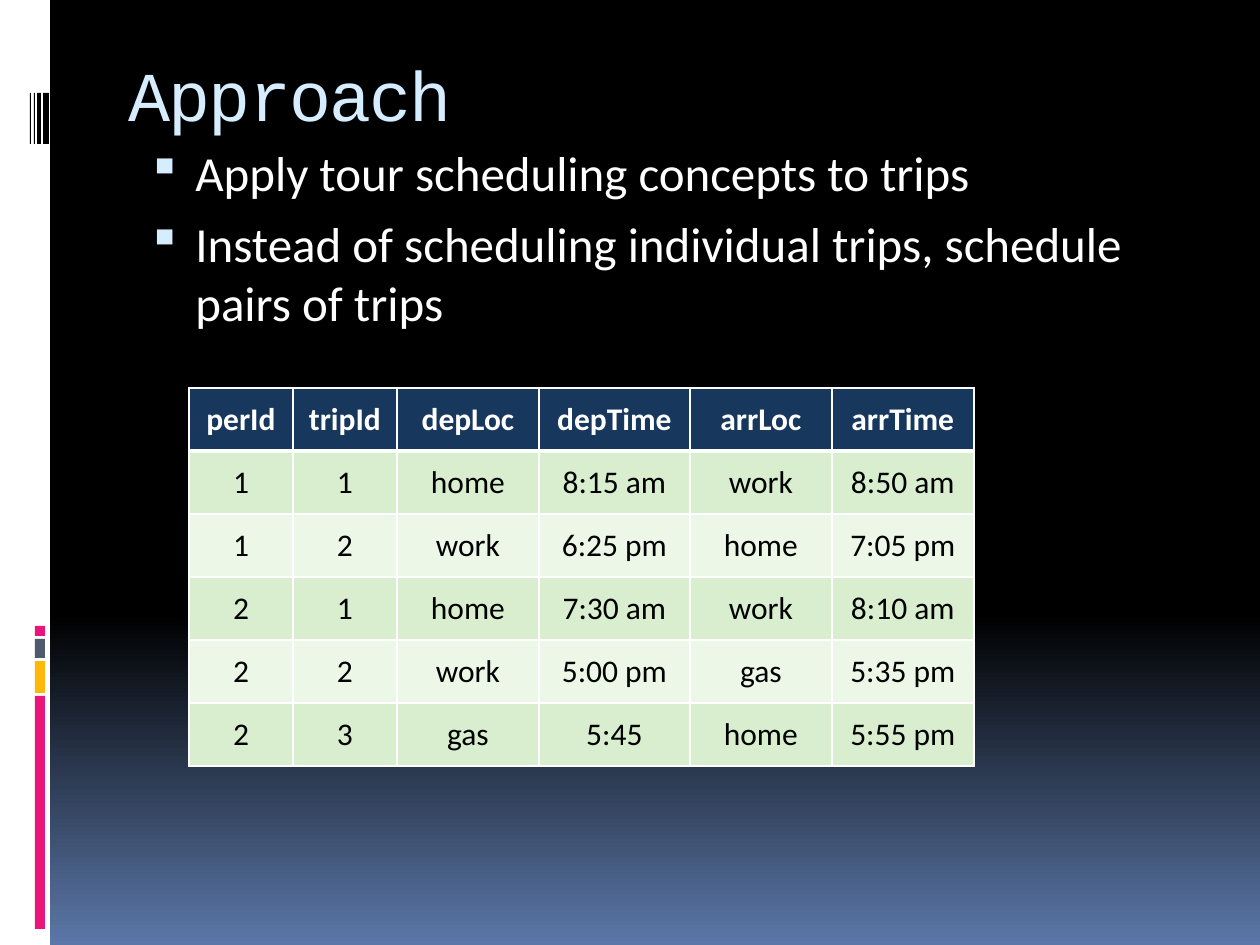
from copy import deepcopy
from dataclasses import dataclass

from lxml.etree import SubElement
from pptx import Presentation
from pptx.dml.color import RGBColor
from pptx.enum.shapes import MSO_SHAPE
from pptx.enum.text import MSO_ANCHOR as Anchor, PP_ALIGN as Align
from pptx.oxml.ns import qn
from pptx.util import Emu, Pt


@dataclass(frozen=True)
class Theme:
    black: str = "000000"
    white: str = "FFFFFF"
    dusk: str = "5B77A8"
    ice: str = "D6ECFF"
    pink: str = "EA157A"
    amber: str = "FEB80A"
    slate: str = "4E5B6F"
    navy: str = "17375D"
    green: str = "D8EECE"
    pale_green: str = "ECF7E8"
    heading_font: str = "Courier New"
    body_font: str = "Calibri"
    heading_size: int = 40
    body_size: int = 28
    table_size: int = 18


def px(length):
    return Emu(round(length * 914400 / 126))


class SlideBuilder:
    """Draws themed elements on one slide, measured in px."""

    def __init__(self, slide, theme):
        self.slide = slide
        self.theme = theme

    def background(self):
        fill = self.slide.background.fill
        fill.gradient()
        fill.gradient_angle = 270
        dark, light = fill.gradient_stops
        dark.color.rgb = RGBColor.from_string(self.theme.black)
        light.color.rgb = RGBColor.from_string(self.theme.dusk)
        dark.position, light.position = 0, 1
        first_stop = next(self.slide.element.iter(qn("a:gs")))
        dark_end = deepcopy(first_stop)
        dark_end.set("pos", "65000")
        first_stop.addnext(dark_end)

    def bar(self, left, top, width, height, color):
        bar = self.slide.shapes.add_shape(
            MSO_SHAPE.RECTANGLE, px(left), px(top), px(width), px(height))
        bar.shadow.inherit = False
        bar.fill.solid()
        bar.fill.fore_color.rgb = RGBColor.from_string(color)
        bar.line.fill.background()

    def style(self, paragraph, font_name, size, color, bold=False):
        for run in paragraph.runs:
            run.font.name = font_name
            run.font.size = Pt(size)
            run.font.bold = bold
            run.font.color.rgb = RGBColor.from_string(color)

    def text_frame(self, left, top, width, height, text):
        frame = self.slide.shapes.add_textbox(
            px(left), px(top), px(width), px(height)).text_frame
        frame.word_wrap = True
        frame.text = text
        return frame

    def title(self, left, top, width, height, text):
        theme = self.theme
        frame = self.text_frame(left, top, width, height, text)
        frame.margin_top = px(20)
        heading = frame.paragraphs[0]
        self.style(heading, theme.heading_font, theme.heading_size, theme.ice)
        heading.runs[0].font._element.set("spc", "-100")

    def bullets(self, left, top, width, height, points):
        theme = self.theme
        frame = self.text_frame(left, top, width, height, "\n".join(points))
        for point in frame.paragraphs:
            self.style(point, theme.body_font, theme.body_size, theme.white)
            point.space_before = Pt(7)
            props = point._p.get_or_add_pPr()
            props.set("marL", str(px(57)))
            props.set("indent", str(px(-48)))
            bullet_color = SubElement(props, qn("a:buClr"))
            SubElement(bullet_color, qn("a:srgbClr"), val=theme.ice)
            SubElement(props, qn("a:buSzPct"), val="95000")
            SubElement(props, qn("a:buChar"), char="▪")

    def cell(self, cell, text, fill, color, bold, borders):
        cell.text = text
        cell.vertical_anchor = Anchor.MIDDLE
        label = cell.text_frame.paragraphs[0]
        label.alignment = Align.CENTER
        self.style(label, self.theme.body_font, self.theme.table_size, color, bold)
        props = cell._tc.get_or_add_tcPr()
        for side, points in borders.items():
            line = SubElement(props, qn(f"a:ln{side}"), w=str(Pt(points)))
            paint = SubElement(line, qn("a:solidFill"))
            SubElement(paint, qn("a:srgbClr"), val=self.theme.white)
        cell.fill.solid()
        cell.fill.fore_color.rgb = RGBColor.from_string(fill)

    def table(self, left, top, column_widths, row_height, rows):
        theme = self.theme
        table = self.slide.shapes.add_table(
            len(rows), len(column_widths), px(left), px(top),
            px(sum(column_widths)), px(row_height * len(rows))).table
        for column, width in zip(table.columns, column_widths):
            column.width = px(width)
        for index, values in enumerate(rows):
            table.rows[index].height = px(row_height)
            header = index == 0
            band = theme.green if index % 2 else theme.pale_green
            fill = theme.navy if header else band
            color = theme.white if header else theme.black
            borders = {"L": 1, "R": 1, "T": 3 if index == 1 else 1, "B": 3 if header else 1}
            for column, value in enumerate(values):
                self.cell(table.cell(index, column), value, fill, color, header, borders)


def main():
    theme = Theme()
    deck = Presentation()
    deck.slide_width, deck.slide_height = px(1260), px(945)
    builder = SlideBuilder(deck.slides.add_slide(deck.slide_layouts[6]), theme)

    builder.background()
    builder.bar(0, 0, 50, 945, theme.white)
    for top, height, color in [(696, 233, theme.pink), (661, 32, theme.amber),
                               (639, 19, theme.slate), (626, 10, theme.pink)]:
        builder.bar(35, top, 10, height, color)
    for left, width in [(43, 6), (37, 4), (34, 1), (30, 1)]:
        builder.bar(left, 93, width, 51, theme.black)

    builder.title(116, 32, 1071, 97, "Approach")
    builder.bullets(126, 136, 1071, 231, [
        "Apply tour scheduling concepts to trips",
        "Instead of scheduling individual trips, schedule pairs of trips",
    ])
    builder.table(189, 388, [104, 104, 142, 151, 142, 142], 63, [
        ("perId", "tripId", "depLoc", "depTime", "arrLoc", "arrTime"),
        ("1", "1", "home", "8:15 am", "work", "8:50 am"),
        ("1", "2", "work", "6:25 pm", "home", "7:05 pm"),
        ("2", "1", "home", "7:30 am", "work", "8:10 am"),
        ("2", "2", "work", "5:00 pm", "gas", "5:35 pm"),
        ("2", "3", "gas", "5:45", "home", "5:55 pm"),
    ])
    deck.save("out.pptx")


if __name__ == "__main__":
    main()
